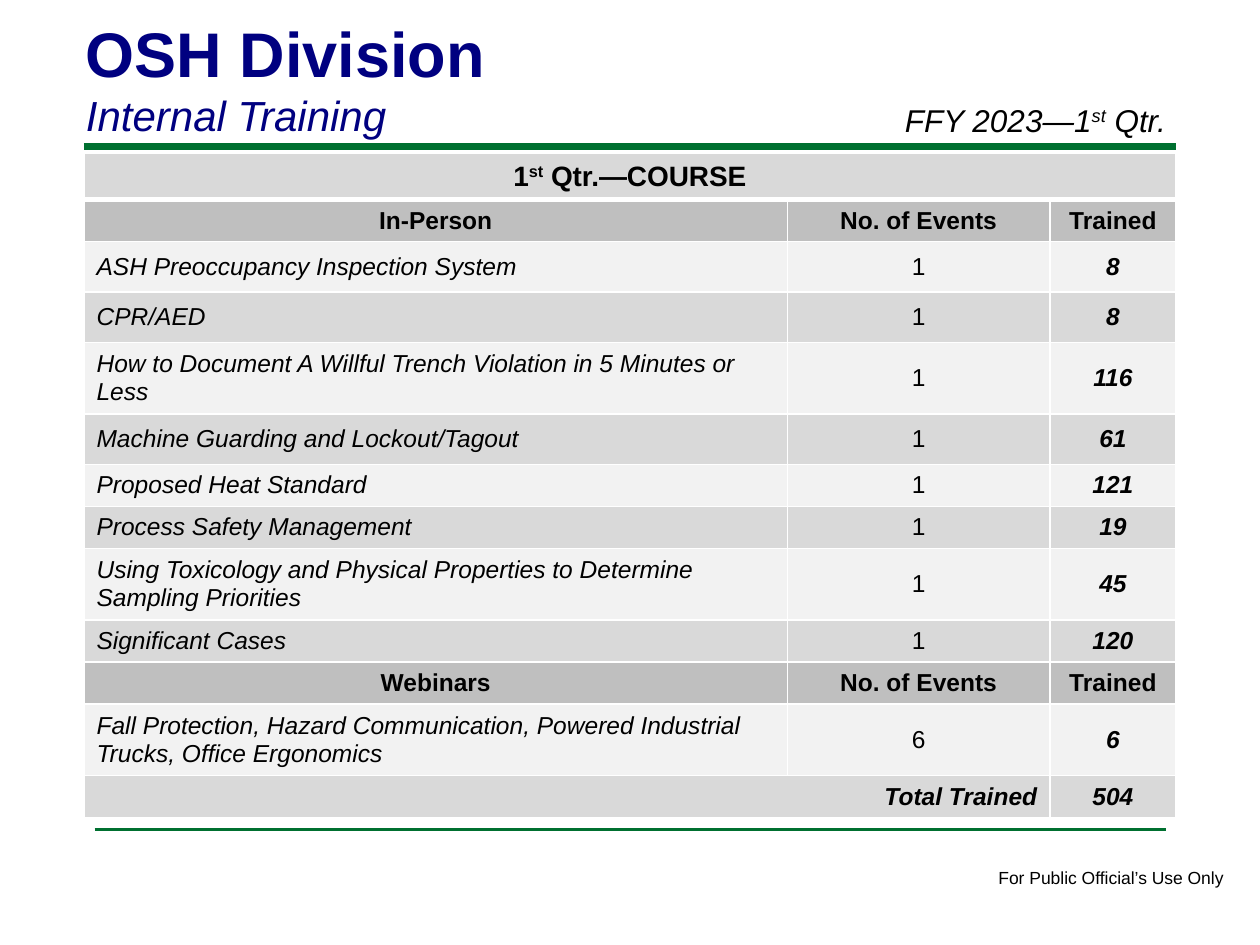
from lxml.etree import SubElement
from pptx import Presentation
from pptx.dml.color import RGBColor
from pptx.enum.shapes import MSO_CONNECTOR
from pptx.enum.text import MSO_ANCHOR, MSO_AUTO_SIZE, PP_ALIGN
from pptx.oxml import parse_xml
from pptx.oxml.ns import nsdecls, qn
from pptx.util import Inches, Pt

COLUMNS, ROWS = 120, 90
SLIDE_WIDTH, SLIDE_HEIGHT = Inches(10), Inches(7.5)
GREEN, NAVY, BLACK, WHITE = "007030", "000080", "000000", "FFFFFF"
LIGHT, MEDIUM, DARK = "F2F2F2", "D9D9D9", "BFBFBF"
LEFT, CENTER, RIGHT = PP_ALIGN.LEFT, PP_ALIGN.CENTER, PP_ALIGN.RIGHT
SHORT, TALL, DOUBLE = 3.84, 4.8, 6.5
COURSE_COLUMNS = (67, 25, 12)
IN_PERSON = [
    ("ASH Preoccupancy Inspection System", 1, 8, TALL),
    ("CPR/AED", 1, 8, TALL),
    ("How to Document A Willful Trench Violation in 5 Minutes or Less", 1, 116, DOUBLE),
    ("Machine Guarding and Lockout/Tagout", 1, 61, TALL),
    ("Proposed Heat Standard", 1, 121, SHORT),
    ("Process Safety Management", 1, 19, SHORT),
    ("Using Toxicology and Physical Properties to Determine Sampling Priorities", 1, 45, 6.7),
    ("Significant Cases", 1, 120, SHORT),
]
WEBINARS = [
    ("Fall Protection, Hazard Communication, Powered Industrial Trucks, Office Ergonomics",
     6, 6, DOUBLE),
]


def x(columns):
    """Turn grid columns into a horizontal length."""
    return round(SLIDE_WIDTH * columns / COLUMNS)


def y(rows):
    """Turn grid rows into a vertical length."""
    return round(SLIDE_HEIGHT * rows / ROWS)


def color(hex_code):
    """Turn a hex string into a colour."""
    return RGBColor.from_string(hex_code)


def write(paragraph, text, size=14, ink=BLACK, bold=False, italic=False, align=LEFT):
    """Fill a paragraph; text between carets is superscript."""
    paragraph.alignment = align
    for index, part in enumerate(text.split("^")):
        run = paragraph.add_run()
        run.text = part
        run.font.name, run.font.size = "Arial", Pt(size)
        run.font.bold, run.font.italic = bold, italic
        run.font.color.rgb = color(ink)
        if index % 2:
            run._r.get_or_add_rPr().set("baseline", "30000")


def add_rule(slide, left, right, row, width):
    """Draw a horizontal green rule."""
    rule = slide.shapes.add_connector(MSO_CONNECTOR.STRAIGHT, x(left), y(row), x(right), y(row))
    rule.line.color.rgb = color(GREEN)
    rule.line.width = Pt(width)
    SubElement(rule._element.spPr, qn("a:effectLst"))


def add_text(slide, left, top, width, height, wrap=True):
    """Add a text box on the grid and return its text frame."""
    frame = slide.shapes.add_textbox(x(left), y(top), x(width), y(height)).text_frame
    frame.word_wrap = wrap
    frame.auto_size = MSO_AUTO_SIZE.SHAPE_TO_FIT_TEXT
    return frame


def set_borders(cell, top=1, bottom=1):
    """Give a cell white borders of the given point widths."""
    properties = cell._tc.get_or_add_tcPr()
    for index, (side, width) in enumerate(zip("LRTB", (1, 1, top, bottom))):
        properties.insert(index, parse_xml(
            f'<a:ln{side} {nsdecls("a")} w="{Pt(width)}"><a:solidFill>'
            f'<a:srgbClr val="{WHITE}"/></a:solidFill></a:ln{side}>'))


def fill_cell(cell, text, fill, **style):
    """Write and shade one table cell."""
    cell.fill.solid()
    cell.fill.fore_color.rgb = color(fill)
    cell.vertical_anchor = MSO_ANCHOR.MIDDLE
    write(cell.text_frame.paragraphs[0], text, **style)


def fill_section(table, start, heading, courses):
    """Write a heading row and its shaded courses; return the next row."""
    for column, label in enumerate((heading, "No. of Events", "Trained")):
        fill_cell(table.cell(start, column), label, DARK, bold=True, align=CENTER)
    for index, (course, events, trained, height) in enumerate(courses):
        row, shade = start + 1 + index, (LIGHT, MEDIUM)[index % 2]
        table.rows[row].height = y(height)
        fill_cell(table.cell(row, 0), course, shade, italic=True)
        fill_cell(table.cell(row, 1), str(events), shade, align=CENTER)
        fill_cell(table.cell(row, 2), str(trained), shade, bold=True, italic=True, align=CENTER)
    return start + 1 + len(courses)


def add_course_table(slide):
    """Build the table of courses, events and people trained."""
    sections = (("In-Person", IN_PERSON), ("Webinars", WEBINARS))
    count = 2 + sum(1 + len(courses) for _, courses in sections)
    table = slide.shapes.add_table(
        count, 3, x(8), y(14.6), x(sum(COURSE_COLUMNS)), y(count * SHORT)).table
    table.first_row = table.horz_banding = False
    for column, width in zip(table.columns, COURSE_COLUMNS):
        column.width = x(width)
    for row in range(count):
        table.rows[row].height = y(SHORT)
        for column in range(3):
            set_borders(table.cell(row, column), top=3 if row == 1 else 1,
                        bottom=3 if row == 0 else 1)
    table.rows[0].height = y(4.2)
    table.cell(0, 0).merge(table.cell(0, 2))
    fill_cell(table.cell(0, 0), "1^st^ Qtr.—COURSE", MEDIUM, size=16, bold=True, align=CENTER)
    row = 1
    for heading, courses in sections:
        row = fill_section(table, row, heading, courses)
    table.cell(row, 0).merge(table.cell(row, 1))
    total = sum(trained for _, courses in sections for _, _, trained, _ in courses)
    fill_cell(table.cell(row, 0), "Total Trained", MEDIUM, bold=True, italic=True, align=RIGHT)
    fill_cell(table.cell(row, 2), str(total), MEDIUM, bold=True, italic=True, align=CENTER)


def main():
    """Build and save the training slide."""
    deck = Presentation()
    deck.slide_width, deck.slide_height = SLIDE_WIDTH, SLIDE_HEIGHT
    slide = deck.slides.add_slide(deck.slide_layouts[6])
    add_rule(slide, 8, 112, 14, 4)
    add_rule(slide, 9, 111, 79, 2)
    footer = add_text(slide, 93.9, 82, 24.1, 3.2, wrap=False)
    write(footer.paragraphs[0], "For Public Official’s Use Only", size=10)
    title = add_text(slide, 7, 0.7, 99, 13.3)
    title.vertical_anchor = MSO_ANCHOR.MIDDLE
    write(title.paragraphs[0], "OSH Division", size=36, ink=NAVY, bold=True)
    write(title.add_paragraph(), "Internal Training", size=24, ink=NAVY, italic=True)
    quarter = add_text(slide, 85, 9, 30, 4.8)
    write(quarter.paragraphs[0], "FFY 2023—1^st^ Qtr.", size=18, italic=True)
    add_course_table(slide)
    deck.save("out.pptx")


if __name__ == "__main__":
    main()
